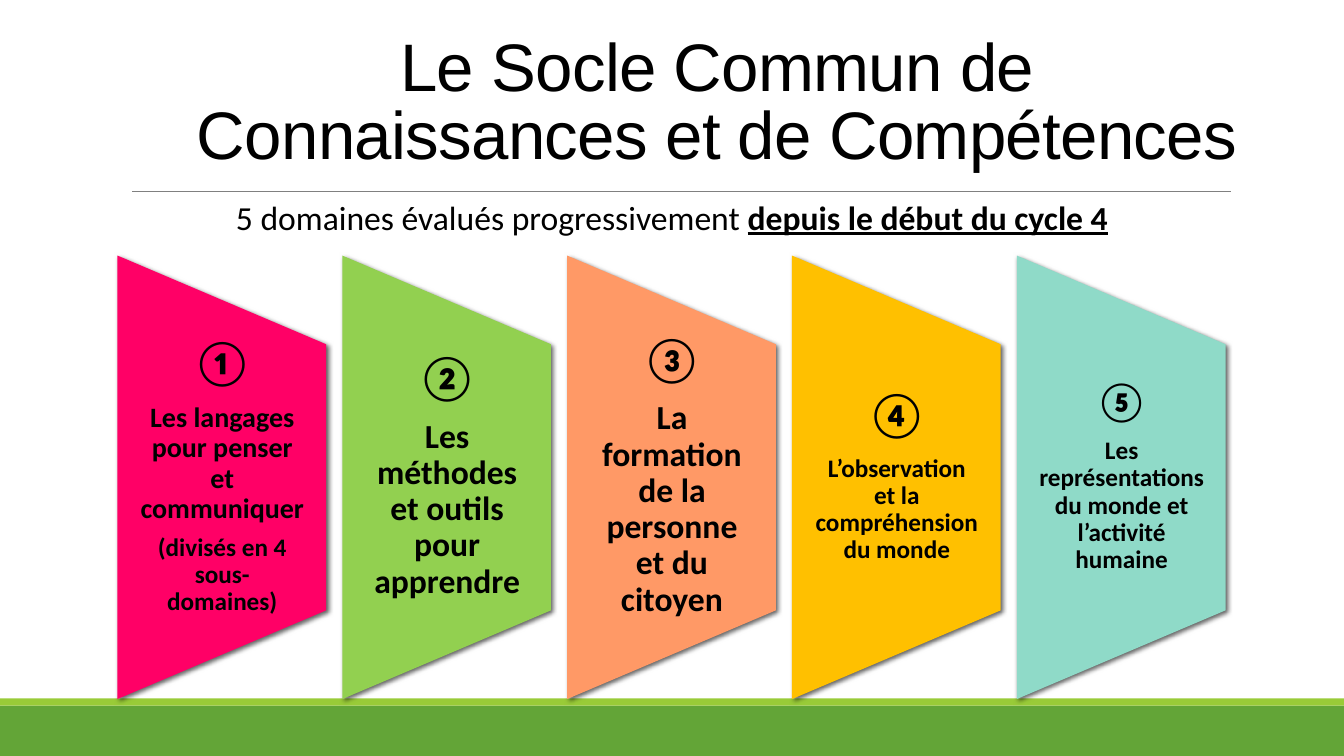
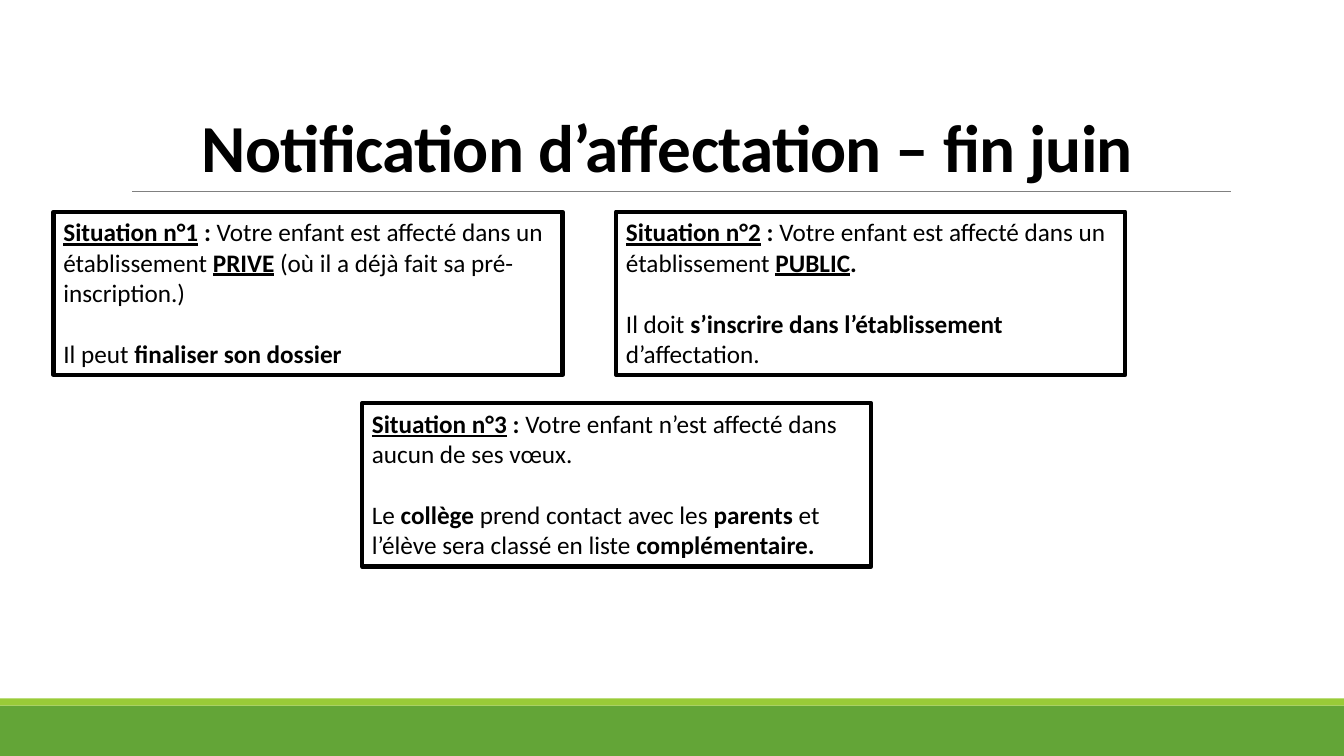
from dataclasses import dataclass

from lxml import etree
from pptx import Presentation
from pptx.dml.color import RGBColor
from pptx.enum.shapes import MSO_CONNECTOR, MSO_SHAPE
from pptx.enum.text import MSO_ANCHOR, PP_ALIGN
from pptx.oxml.ns import qn
from pptx.util import Emu, Pt

EMU_PER_PX = 9144  # 100 px to the inch
SLIDE_WIDTH, SLIDE_HEIGHT = 1333, 750


@dataclass(frozen=True)
class Theme:
    text: str = "000000"
    rule: str = "808080"
    band: str = "63A537"
    band_edge: str = "99CB38"
    pink: str = "FF0066"
    green: str = "92D050"
    orange: str = "FF9966"
    gold: str = "FFC000"
    mint: str = "8FDAC8"
    font: str = "Calibri"
    title_font: str = "Arial"
    title_size: int = 48
    marker_size: int = 32
    small_marker_size: int = 28
    large_size: int = 24
    medium_size: int = 20
    body_size: int = 18
    paragraph_gap: int = 22


THEME = Theme()


def px(length):
    return Emu(length * EMU_PER_PX)


def box(*lengths):
    return [px(length) for length in lengths]


def apply(target, formats):
    for name, value in formats.items():
        setattr(target, name, value)


class Deck:
    """Holds the style and the slide being drawn."""

    def __init__(self, theme):
        self.theme = theme
        self.presentation = Presentation()
        self.presentation.slide_width = px(SLIDE_WIDTH)
        self.presentation.slide_height = px(SLIDE_HEIGHT)
        self.slide = None

    def new_slide(self, title, left, top, **title_font):
        """Add a slide with the shared bands, rule and title."""
        self.slide = self.presentation.slides.add_slide(self.presentation.slide_layouts[6])
        self.shape(MSO_SHAPE.RECTANGLE, 0, 700, SLIDE_WIDTH, 50, fill=self.theme.band)
        self.shape(MSO_SHAPE.RECTANGLE, 0, 693, SLIDE_WIDTH, 7, fill=self.theme.band_edge)
        self.line(131, 190, 1221, 190)
        frame = self.text_box(left, top, 1100, 159, vertical_anchor=MSO_ANCHOR.BOTTOM)
        paragraph = self.paragraph(frame, [(title, "")], self.theme.title_size,
                                   alignment=PP_ALIGN.CENTER, line_spacing=0.85)
        run = paragraph.runs[0]
        apply(run.font, title_font)
        run.font._element.set("spc", "-50")

    def shape(self, kind, left, top, width, height, fill=None, border=None):
        shape = self.slide.shapes.add_shape(kind, *box(left, top, width, height))
        shape.shadow.inherit = False
        if fill:
            shape.fill.solid()
            shape.fill.fore_color.rgb = RGBColor.from_string(fill)
        else:
            shape.fill.background()
        if border:
            shape.line.color.rgb = RGBColor.from_string(border)
            shape.line.width = Pt(3)
        else:
            shape.line.fill.background()
        return shape

    def line(self, left, top, right, bottom):
        connector = self.slide.shapes.add_connector(
            MSO_CONNECTOR.STRAIGHT, *box(left, top, right, bottom))
        connector.line.color.rgb = RGBColor.from_string(self.theme.rule)
        connector.line.width = Pt(0.5)
        etree.SubElement(connector._element.spPr, qn("a:effectLst"))

    def cast_shadow(self, shape):
        effects = shape._element.spPr.find(qn("a:effectLst"))
        shadow = etree.SubElement(effects, qn("a:outerShdw"), blurRad="44450",
                                  dist="25400", dir="2700000", rotWithShape="0")
        color = etree.SubElement(shadow, qn("a:srgbClr"), val=self.theme.text)
        etree.SubElement(color, qn("a:alpha"), val="60000")

    def text_box(self, left, top, width, height, **formats):
        frame = self.slide.shapes.add_textbox(*box(left, top, width, height)).text_frame
        apply(frame, {"word_wrap": True, **formats})
        return frame

    def paragraph(self, frame, runs, size, **formats):
        """Add a paragraph of (text, style) runs; style letters are b and u."""
        first = frame.paragraphs[0]
        paragraph = frame.add_paragraph() if first.runs else first
        apply(paragraph, formats)
        for text, style in runs:
            run = paragraph.add_run()
            run.text = text
            apply(run.font, {"name": self.theme.font, "size": Pt(size),
                             "bold": "b" in style, "underline": "u" in style})
            run.font.color.rgb = RGBColor.from_string(self.theme.text)
        return paragraph

    def domain(self, left, color, marker, marker_size, texts):
        """Draw a trapezoid, wide edge to the left, with a marker and its texts."""
        top, width, height = 254, 207, 440
        shape = self.shape(MSO_SHAPE.FLOWCHART_MANUAL_OPERATION,
                           left + (width - height) // 2, top + (height - width) // 2,
                           height, width, fill=color)
        shape.rotation = 270
        self.cast_shadow(shape)
        inset = px(round(marker_size * 100 / 144))
        frame = self.text_box(left, top + height // 5, width, height * 3 // 5,
                              vertical_anchor=MSO_ANCHOR.MIDDLE, margin_left=inset,
                              margin_right=inset, margin_top=0, margin_bottom=0)
        for text, size in [(marker, marker_size), *texts]:
            self.paragraph(frame, [(text, "b")], size, alignment=PP_ALIGN.CENTER,
                           line_spacing=0.9, space_after=Pt(round(size * 0.35)))

    def situation(self, left, top, paragraphs):
        shape = self.shape(MSO_SHAPE.RECTANGLE, left, top, 505, 162, border=self.theme.text)
        frame = shape.text_frame
        apply(frame, {"word_wrap": True, "vertical_anchor": MSO_ANCHOR.TOP})
        for index, runs in enumerate(paragraphs):
            gap = Pt(self.theme.paragraph_gap if index else 0)
            self.paragraph(frame, runs, self.theme.body_size,
                           alignment=PP_ALIGN.LEFT, space_before=gap)


DOMAINS = [
    (THEME.pink, "①", THEME.marker_size,
     [("Les langages pour penser et communiquer", THEME.medium_size),
      ("(divisés en 4 sous-domaines)", THEME.body_size)]),
    (THEME.green, "②", THEME.marker_size,
     [("Les méthodes et outils pour apprendre", THEME.large_size)]),
    (THEME.orange, "③", THEME.marker_size,
     [("La formation de la personne et du citoyen", THEME.large_size)]),
    (THEME.gold, "④", THEME.marker_size,
     [("L’observation et la compréhension du monde", THEME.body_size)]),
    (THEME.mint, "⑤", THEME.small_marker_size,
     [("Les représentations du monde et l’activité humaine", THEME.body_size)]),
]

SITUATIONS = [
    (53, 210, [
        [("Situation n°1", "bu"), (" : ", "b"),
         ("Votre enfant est affecté dans un établissement ", ""), ("PRIVE", "bu"),
         (" (où il a déjà fait sa pré-inscription.)", "")],
        [("Il peut ", ""), ("finaliser son dossier", "b")]]),
    (611, 210, [
        [("Situation n°2", "bu"), (" : ", "b"),
         ("Votre enfant est affecté dans un établissement ", ""), ("PUBLIC", "bu"),
         (".", "b")],
        [("Il doit ", ""), ("s’inscrire dans l’établissement ", "b"),
         ("d’affectation.", "")]]),
    (359, 400, [
        [("Situation n°3", "bu"), (" : ", "b"),
         ("Votre enfant n’est affecté dans aucun de ses vœux.", "")],
        [("Le ", ""), ("collège", "b"), (" prend contact avec les ", ""),
         ("parents", "b"), (" et l’élève sera classé en liste ", ""),
         ("complémentaire.", "b")]]),
]


def main():
    deck = Deck(THEME)

    deck.new_slide("Le Socle Commun de Connaissances et de Compétences", 161, 18,
                   name=THEME.title_font)
    for index, domain in enumerate(DOMAINS):
        deck.domain(117 + 223 * index, *domain)
    subtitle = deck.text_box(120, 190, 1093, 50)
    deck.paragraph(subtitle, [("5 domaines évalués progressivement ", ""),
                              ("depuis le début du cycle 4", "bu")],
                   THEME.large_size, alignment=PP_ALIGN.CENTER)

    deck.new_slide("Notification d’affectation – fin juin", 112, 31, bold=True)
    for situation in SITUATIONS:
        deck.situation(*situation)

    deck.presentation.save("out.pptx")


if __name__ == "__main__":
    main()
